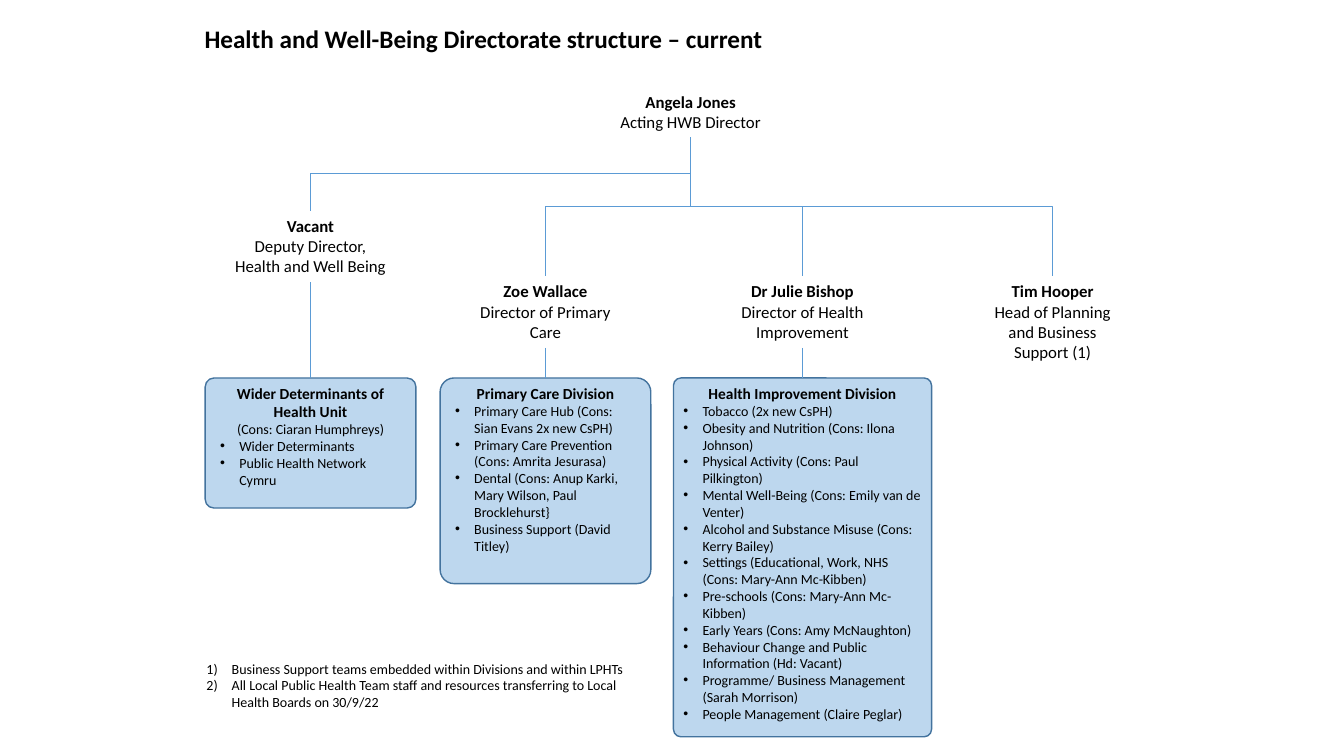
from lxml import etree
from pptx import Presentation
from pptx.dml.color import RGBColor
from pptx.enum.shapes import MSO_CONNECTOR, MSO_SHAPE
from pptx.enum.text import MSO_AUTO_SIZE, PP_ALIGN
from pptx.oxml.ns import qn
from pptx.util import Inches, Pt

ELBOW, STRAIGHT = MSO_CONNECTOR.ELBOW, MSO_CONNECTOR.STRAIGHT
ROUNDED = MSO_SHAPE.ROUNDED_RECTANGLE
CENTER, LEFT = PP_ALIGN.CENTER, PP_ALIGN.LEFT
GROW = MSO_AUTO_SIZE.SHAPE_TO_FIT_TEXT
TOP_SIDE, BOTTOM_SIDE = 0, 2

COLORS = {"text": "000000", "card": "BDD7EE", "border": "43739E", "link": "5B9BD5"}
FONT = "Calibri"
STYLES = {
    "title": {"size": Pt(18), "bold": True},
    "name": {"size": Pt(12), "bold": True, "align": CENTER},
    "role": {"size": Pt(12), "bold": False, "align": CENTER},
    "heading": {"size": Pt(11), "bold": True, "align": CENTER},
    "lead": {"size": Pt(10), "bold": False, "align": CENTER},
    "bullet": {"size": Pt(10), "bold": False, "indent": 0.19,
               "marks": [("a:buFont", {"typeface": "Arial"}), ("a:buChar", {"char": "•"})]},
    "number": {"size": Pt(10), "bold": False, "indent": 0.25,
               "marks": [("a:buFont", {"typeface": "+mj-lt"}),
                         ("a:buAutoNum", {"type": "arabicParenR"})]},
}

TITLE = "Health and Well-Being Directorate structure – current"
NOTES = [
    "Business Support teams embedded within Divisions and within LPHTs",
    "All Local Public Health Team staff and resources transferring to Local Health Boards on 30/9/22",
]
PEOPLE = {
    "director": ("Angela Jones", "Acting HWB Director", 6.85, 0.86, 1.7, 0.5),
    "deputy": ("Vacant", "Deputy Director, Health and Well Being", 3.08, 2.09, 1.73, 0.71),
    "primary": ("Zoe Wallace", "Director of Primary Care", 5.41, 2.74, 1.51, 0.71),
    "improvement": ("Dr Julie Bishop", "Director of Health Improvement", 7.96, 2.74, 1.7, 0.71),
    "planning": ("Tim Hooper", "Head of Planning and Business Support (1)", 10.44, 2.74, 1.37, 0.91),
}
REPORTS = ["deputy", "primary", "improvement", "planning"]
DIVISIONS = {
    "deputy": {
        "heading": "Wider Determinants of Health Unit",
        "lead": ["(Cons: Ciaran Humphreys)"],
        "teams": ["Wider Determinants", "Public Health Network Cymru"],
        "card": (2.09, 1.29), "corner": 0.068, "words": (1.99, 1.14),
    },
    "primary": {
        "heading": "Primary Care Division",
        "lead": [],
        "teams": [
            "Primary Care Hub (Cons: Sian Evans 2x new CsPH)",
            "Primary Care Prevention (Cons: Amrita Jesurasa)",
            "Dental (Cons: Anup Karki, Mary Wilson, Paul Brocklehurst}",
            "Business Support (David Titley)",
        ],
        "card": (2.09, 2.04), "corner": 0.068, "words": (1.99, 1.8),
    },
    "improvement": {
        "heading": "Health Improvement Division",
        "lead": [],
        "teams": [
            "Tobacco (2x new CsPH)",
            "Obesity and Nutrition (Cons: Ilona Johnson)",
            "Physical Activity (Cons: Paul Pilkington)",
            "Mental Well-Being (Cons: Emily van de Venter)",
            "Alcohol and Substance Misuse (Cons: Kerry Bailey)",
            "Settings (Educational, Work, NHS (Cons: Mary-Ann Mc-Kibben)",
            "Pre-schools (Cons: Mary-Ann Mc-Kibben)",
            "Early Years (Cons: Amy McNaughton)",
            "Behaviour Change and Public Information (Hd: Vacant)",
            "Programme/ Business Management (Sarah Morrison)",
            "People Management (Claire Peglar)",
        ],
        "card": (2.56, 3.56), "corner": 0.029, "words": (2.56, 3.48),
    },
}
CARD_TOP = 3.75


def rgb(role):
    return RGBColor.from_string(COLORS[role])


def write(slide, box, lines):
    area = slide.shapes.add_textbox(*map(Inches, box))
    frame = area.text_frame
    frame.word_wrap = True
    frame.auto_size = GROW
    for index, (style_name, words) in enumerate(lines):
        style = STYLES[style_name]
        paragraph = frame.add_paragraph() if index else frame.paragraphs[0]
        paragraph.alignment = style.get("align", LEFT)
        if "indent" in style:
            properties = paragraph._p.get_or_add_pPr()
            properties.set("marL", str(Inches(style["indent"])))
            properties.set("indent", str(-Inches(style["indent"])))
            for tag, values in style["marks"]:
                etree.SubElement(properties, qn(tag), values)
        run = paragraph.add_run()
        run.text = words
        for key, value in {"name": FONT, "size": style["size"], "bold": style["bold"]}.items():
            setattr(run.font, key, value)
        run.font.color.rgb = rgb("text")
    return area


def link(slide, kind, x1, y1, x2, y2):
    line = slide.shapes.add_connector(kind, *map(Inches, (x1, y1, x2, y2)))
    line.line.color.rgb = rgb("link")
    line.line.width = Pt(0.5)
    etree.SubElement(line._element.spPr, qn("a:effectLst"))
    return line


def branch(slide, x1, y1, x2, y2):
    mid_x, mid_y = (x1 + x2) / 2, (y1 + y2) / 2
    half_run, half_drop = abs(x2 - x1) / 2, (y2 - y1) / 2
    side = 1 if x2 > x1 else -1
    line = link(slide, ELBOW, mid_x + side * half_drop, mid_y - half_run,
                mid_x - side * half_drop, mid_y + half_run)
    turn = 270 if side > 0 else 90
    line._element.spPr.find(qn("a:xfrm")).set("rot", str(turn * 60000))


def add_card(slide, center, division):
    width, height = division["card"]
    card = slide.shapes.add_shape(
        ROUNDED, *map(Inches, (center - width / 2, CARD_TOP, width, height)))
    card.adjustments[0] = division["corner"]
    card.shadow.inherit = False
    card.fill.solid()
    card.fill.fore_color.rgb = rgb("card")
    card.line.color.rgb = rgb("border")
    card.line.width = Pt(1)
    lines = [("heading", division["heading"])]
    lines += [("lead", words) for words in division["lead"]]
    lines += [("bullet", team) for team in division["teams"]]
    width, height = division["words"]
    write(slide, (center - width / 2, CARD_TOP + 0.01, width, height), lines)
    return card


def main():
    deck = Presentation()
    deck.slide_width, deck.slide_height = Inches(13.33), Inches(7.5)
    slide = deck.slides.add_slide(deck.slide_layouts[6])

    write(slide, (1.93, 0.18, 8.91, 0.4), [("title", TITLE)])
    labels = {}
    for key, (name, role, center, top, width, height) in PEOPLE.items():
        labels[key] = write(slide, (center - width / 2, top, width, height),
                            [("name", name), ("role", role)])

    _, _, trunk, top, _, height = PEOPLE["director"]
    for key in REPORTS:
        branch(slide, trunk, top + height, PEOPLE[key][2], PEOPLE[key][3])

    for key, division in DIVISIONS.items():
        _, _, center, top, _, height = PEOPLE[key]
        card = add_card(slide, center, division)
        line = link(slide, STRAIGHT, center, top + height, center, CARD_TOP)
        line.begin_connect(labels[key], BOTTOM_SIDE)
        line.end_connect(card, TOP_SIDE)

    write(slide, (1.95, 6.5, 4.36, 0.61), [("number", note) for note in NOTES])
    deck.save("out.pptx")


if __name__ == "__main__":
    main()
